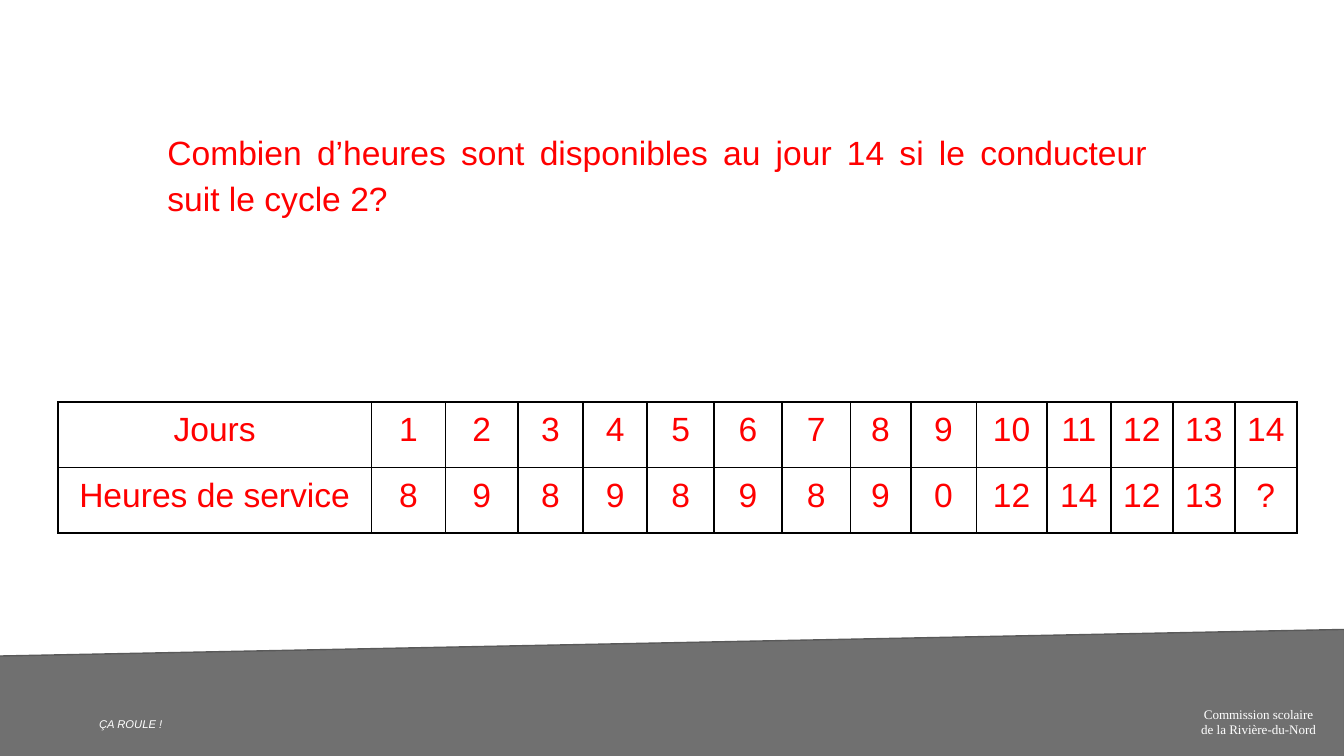
import lxml.etree
import pptx
import pptx.dml.color
import pptx.enum.shapes
import pptx.enum.text
import pptx.oxml.ns
import pptx.util
from dataclasses import dataclass

Pt = pptx.util.Pt
RGB = pptx.dml.color.RGBColor.from_string
ALIGN = pptx.enum.text.PP_ALIGN
qn = pptx.oxml.ns.qn


@dataclass(frozen=True)
class Theme:
    accent: str = "FF0000"
    band: str = "000000"
    band_opacity: int = 56
    band_line: str = "595959"
    light: str = "FFFFFF"
    grid: str = "000000"
    sans: str = "Arial"
    serif: str = "Times New Roman"
    main_size: int = 18
    school_size: int = 7
    motto_size: int = 6


theme = Theme()


def write(holder, frame, lines, font, size, color, align, inset, italic=False):
    """Set the holder's margins and write one paragraph for each line."""
    holder.margin_left = holder.margin_right = Pt(inset)
    holder.margin_top = holder.margin_bottom = Pt(inset)
    for index, line in enumerate(lines):
        para = frame.paragraphs[0] if index == 0 else frame.add_paragraph()
        para.alignment = align
        span = para.add_run()
        span.text = line
        span.font.name = font
        span.font.size = Pt(size)
        span.font.italic = italic
        span.font.color.rgb = RGB(color)


def add_border(cell, color, width):
    """Draw a solid line on all four sides of a table cell."""
    properties = cell._tc.get_or_add_tcPr()
    for side in ("a:lnL", "a:lnR", "a:lnT", "a:lnB"):
        line = lxml.etree.SubElement(properties, qn(side), w=str(Pt(width)))
        fill = lxml.etree.SubElement(line, qn("a:solidFill"))
        lxml.etree.SubElement(fill, qn("a:srgbClr"), val=color)


deck = pptx.Presentation()
deck.slide_width, deck.slide_height = Pt(720), Pt(405)
page = deck.slides.add_slide(deck.slide_layouts[6])

# Slanted footer band
band = page.shapes.add_shape(
    pptx.enum.shapes.MSO_SHAPE.FLOWCHART_MANUAL_INPUT,
    Pt(-1.2), Pt(337.2), Pt(721.5), Pt(71.3))
band.shadow.inherit = False
band.fill.solid()
band.fill.fore_color.rgb = RGB(theme.band)
band_color = band.fill._xPr.find(".//" + qn("a:srgbClr"))
lxml.etree.SubElement(band_color, qn("a:alpha"), val=str(theme.band_opacity * 1000))
band.line.color.rgb = RGB(theme.band_line)
band.line.width = Pt(0.75)

# Footer texts
school = page.shapes.add_textbox(Pt(628.5), Pt(371.2), Pt(91.5), Pt(21.6)).text_frame
school.word_wrap = True
write(school, school, ["Commission scolaire", "de la Rivière-du-Nord"],
      theme.serif, theme.school_size, theme.light, ALIGN.CENTER, 7.2)

motto = page.shapes.add_textbox(Pt(46), Pt(377.6), Pt(58.3), Pt(21)).text_frame
motto.word_wrap = True
motto.vertical_anchor = pptx.enum.text.MSO_ANCHOR.MIDDLE
write(motto, motto, ["ÇA ROULE !"],
      theme.sans, theme.motto_size, theme.light, ALIGN.LEFT, 7.2, italic=True)

# Table of hours by day
rows = [
    ["Jours", *range(1, 15)],
    ["Heures de service", 8, 9, 8, 9, 8, 9, 8, 9, 0, 12, 14, 12, 13, "?"],
]
widths = [168, 39.6, 38.8, 35.1, 34.3, 35.9, 36.2, 36.7,
          32.4, 35.1, 37.8, 34.3, 33.2, 33.2, 33.2]
row_height = 35.2
hours = page.shapes.add_table(
    len(rows), len(widths), Pt(31), Pt(215.3),
    Pt(sum(widths)), Pt(row_height * len(rows))).table
hours.first_row = hours.horz_banding = False
for column, width in zip(hours.columns, widths):
    column.width = Pt(width)
for row_index, values in enumerate(rows):
    hours.rows[row_index].height = Pt(row_height)
    for column_index, value in enumerate(values):
        cell = hours.cell(row_index, column_index)
        write(cell, cell.text_frame, [str(value)], theme.sans, theme.main_size,
              theme.accent, ALIGN.CENTER, 5)
        add_border(cell, theme.grid, 1)
        cell.fill.background()

# Question
question = page.shapes.add_textbox(Pt(82.6), Pt(60), Pt(539), Pt(61)).text_frame
question.word_wrap = True
write(question, question,
      ["Combien d’heures sont disponibles au jour 14 si le conducteur suit le cycle 2?"],
      theme.sans, theme.main_size, theme.accent, ALIGN.JUSTIFY, 7.2)
question.paragraphs[0].line_spacing = 1.15

deck.save("out.pptx")
